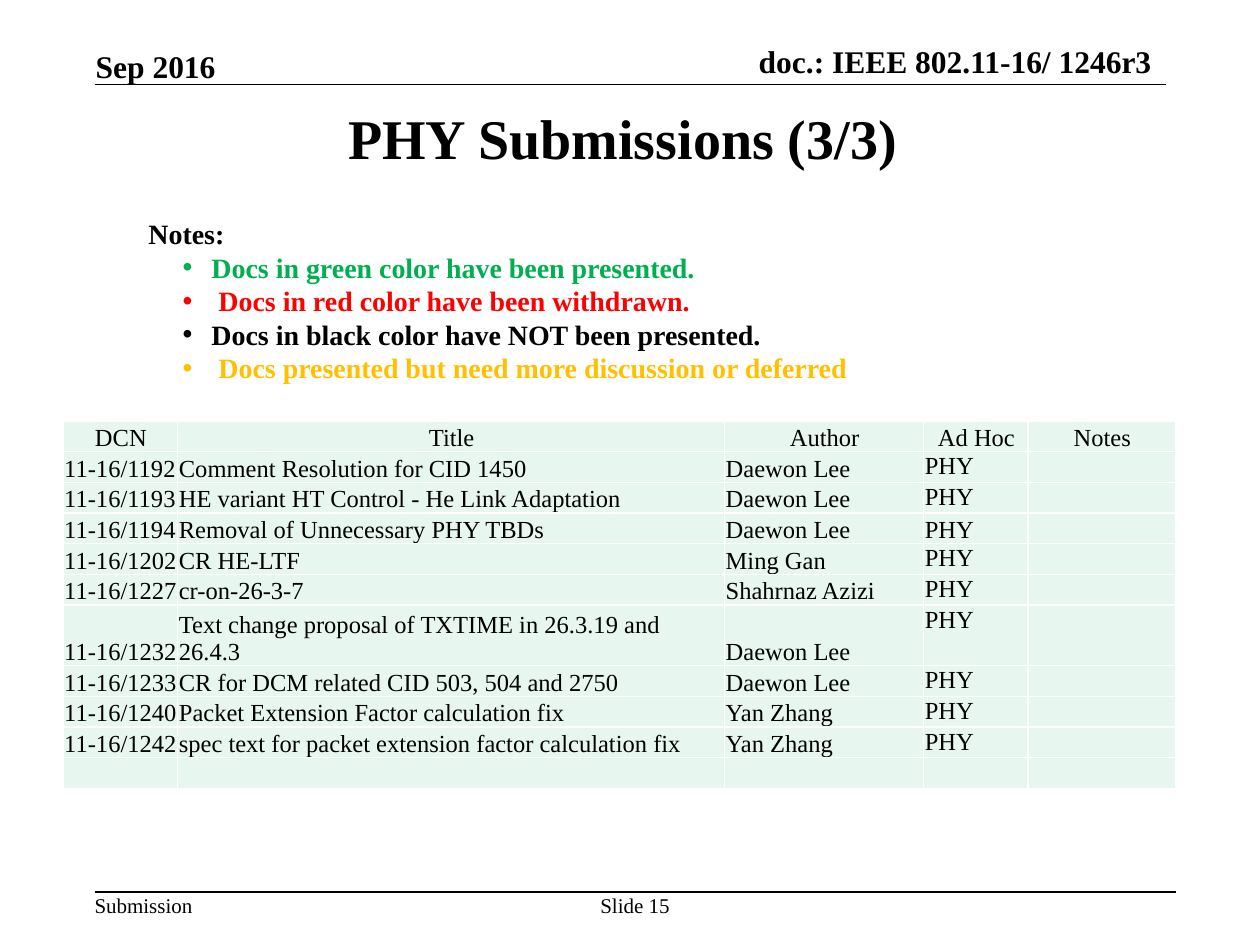
from collections import namedtuple

from lxml import etree
from pptx import Presentation
from pptx import util as u
from pptx.dml.color import RGBColor
from pptx.enum import shapes, text
from pptx.oxml import ns

Box = namedtuple("Box", "left top width height")

FONT = "Times New Roman"
BLACK = RGBColor(0x00, 0x00, 0x00)
GREEN = RGBColor(0x00, 0xB0, 0x50)
RED = RGBColor(0xFF, 0x00, 0x00)
AMBER = RGBColor(0xFF, 0xC0, 0x00)
MINT = RGBColor(0xE7, 0xF6, 0xEF)

LEFT, CENTER, RIGHT = text.PP_ALIGN.LEFT, text.PP_ALIGN.CENTER, text.PP_ALIGN.RIGHT
TOP, MIDDLE, BOTTOM = text.MSO_ANCHOR.TOP, text.MSO_ANCHOR.MIDDLE, text.MSO_ANCHOR.BOTTOM

NOTES = [
    ("Docs in green color have been presented.", GREEN),
    (" Docs in red color have been withdrawn.", RED),
    ("Docs in black color have NOT been presented.", BLACK),
    (" Docs presented but need more discussion or deferred", AMBER),
]
HEADINGS = ["DCN", "Title", "Author", "Ad Hoc", "Notes"]
SUBMISSIONS = [
    ("11-16/1192", "Comment Resolution for CID 1450", "Daewon Lee"),
    ("11-16/1193", "HE variant HT Control - He Link Adaptation", "Daewon Lee"),
    ("11-16/1194", "Removal of Unnecessary PHY TBDs", "Daewon Lee"),
    ("11-16/1202", "CR HE-LTF", "Ming Gan"),
    ("11-16/1227", "cr-on-26-3-7", "Shahrnaz Azizi"),
    ("11-16/1232", "Text change proposal of TXTIME in 26.3.19 and 26.4.3", "Daewon Lee"),
    ("11-16/1233", "CR for DCM related CID 503, 504 and 2750", "Daewon Lee"),
    ("11-16/1240", "Packet Extension Factor calculation fix", "Yan Zhang"),
    ("11-16/1242", "spec text for packet extension factor calculation fix", "Yan Zhang"),
]
COLUMN_WIDTHS = [0.91, 4.34, 1.58, 0.83, 1.17]
ROW_HEIGHT = 0.24
TWO_LINE_ROW = 6
BOTTOM_AD_HOC_ROWS = (0, 3)


def add_run(paragraph, words, size, color=BLACK, bold=False):
    run = paragraph.add_run()
    run.text = words
    run.font.name = FONT
    run.font.size = u.Pt(size)
    run.font.bold = bold
    run.font.color.rgb = color


def add_text_frame(slide, box, anchor=TOP, margins=(0, 0), wrap=False):
    frame = slide.shapes.add_textbox(*map(u.Inches, box)).text_frame
    frame.word_wrap = wrap
    frame.vertical_anchor = anchor
    frame.margin_left = frame.margin_right = u.Inches(margins[0])
    frame.margin_top = frame.margin_bottom = u.Inches(margins[1])
    return frame


def add_label(slide, box, words, size, align=LEFT, bold=False, **frame_options):
    paragraph = add_text_frame(slide, box, **frame_options).paragraphs[0]
    paragraph.alignment = align
    add_run(paragraph, words, size, bold=bold)


def add_rule(slide, left, top, width):
    rule = slide.shapes.add_connector(
        shapes.MSO_CONNECTOR.STRAIGHT,
        u.Inches(left), u.Inches(top), u.Inches(left + width), u.Inches(top),
    )
    rule.line.color.rgb = BLACK
    rule.line.width = u.Pt(1)
    etree.SubElement(rule._element.spPr, ns.qn("a:effectLst"))


def add_header(slide, box):
    add_label(slide, Box(box.left + 0.01, box.top + 0.04, 0.96, 0.3), "Sep 2016", 18,
              bold=True, anchor=BOTTOM)
    add_label(slide, Box(box.left + 4.61, box.top, 3.78, 0.3),
              "doc.: IEEE 802.11-16/ 1246r3", 18, RIGHT, bold=True, anchor=BOTTOM)
    add_rule(slide, box.left, box.top + box.height, box.width)


def add_title(slide, box):
    add_label(slide, box, "PHY Submissions (3/3) ", 32, CENTER, bold=True,
              anchor=MIDDLE, margins=(0.1, 0.05), wrap=True)


def add_bullet(paragraph):
    properties = paragraph._p.get_or_add_pPr()
    properties.set("marL", str(u.Inches(0.5)))
    properties.set("indent", str(-u.Inches(0.23)))
    etree.SubElement(properties, ns.qn("a:buFont"), typeface="Arial")
    etree.SubElement(properties, ns.qn("a:buChar"), char="•")


def add_notes(slide, box):
    frame = add_text_frame(slide, box, margins=(0.1, 0.05), wrap=True)
    add_run(frame.paragraphs[0], "Notes:", 16, bold=True)
    for words, color in NOTES:
        paragraph = frame.add_paragraph()
        paragraph.level = 1
        add_bullet(paragraph)
        add_run(paragraph, words, 16, color, bold=True)


def add_cell_borders(cell):
    properties = cell._tc.get_or_add_tcPr()
    for side in ("lnL", "lnR", "lnT", "lnB"):
        border = etree.SubElement(properties, ns.qn(f"a:{side}"), w=str(u.Pt(1)))
        fill = etree.SubElement(border, ns.qn("a:solidFill"))
        etree.SubElement(fill, ns.qn("a:srgbClr"), val="FFFFFF")


def fill_cell(cell, words, align, anchor):
    add_cell_borders(cell)
    cell.fill.solid()
    cell.fill.fore_color.rgb = MINT
    cell.margin_left = cell.margin_top = u.Inches(0.01)
    cell.margin_right = cell.margin_bottom = 0
    cell.vertical_anchor = anchor
    paragraph = cell.text_frame.paragraphs[0]
    paragraph.alignment = align
    if words:
        add_run(paragraph, words, 14)
    else:
        etree.SubElement(paragraph._p, ns.qn("a:endParaRPr"), sz="1400")


def add_submissions(slide, box):
    rows = [HEADINGS, *[(*entry, "PHY", "") for entry in SUBMISSIONS], [""] * len(HEADINGS)]
    table = slide.shapes.add_table(len(rows), len(HEADINGS), *map(u.Inches, box)).table
    table.first_row = table.horz_banding = False
    for column, width in zip(table.columns, COLUMN_WIDTHS):
        column.width = u.Inches(width)
    for row_index, row in enumerate(rows):
        lines = 2 if row_index == TWO_LINE_ROW else 1
        table.rows[row_index].height = u.Inches(ROW_HEIGHT * lines)
        for column_index, words in enumerate(row):
            at_top = column_index == 3 and row_index not in BOTTOM_AD_HOC_ROWS
            fill_cell(table.cell(row_index, column_index), words,
                      LEFT if row_index else CENTER, TOP if at_top else BOTTOM)


def add_footer(slide, box):
    add_rule(slide, box.left, box.top, box.width)
    add_label(slide, Box(box.left, box.top, 0.78, box.height), "Submission", 12)
    add_label(slide, Box(box.left + 4, box.top, 0.58, box.height), "Slide 15", 12, CENTER)


def main():
    presentation = Presentation()
    presentation.slide_width = u.Inches(10)
    presentation.slide_height = u.Inches(7.5)
    slide = presentation.slides.add_slide(presentation.slide_layouts[6])
    add_header(slide, Box(0.75, 0.33, 8.5, 0.34))
    add_title(slide, Box(0.75, 0.5, 8.5, 1.17))
    add_notes(slide, Box(1.08, 1.67, 6.75, 1.72))
    add_submissions(slide, Box(0.5, 3.34, 8.83, 2.88))
    add_footer(slide, Box(0.75, 7.08, 8.58, 0.2))
    presentation.save("out.pptx")


if __name__ == "__main__":
    main()
